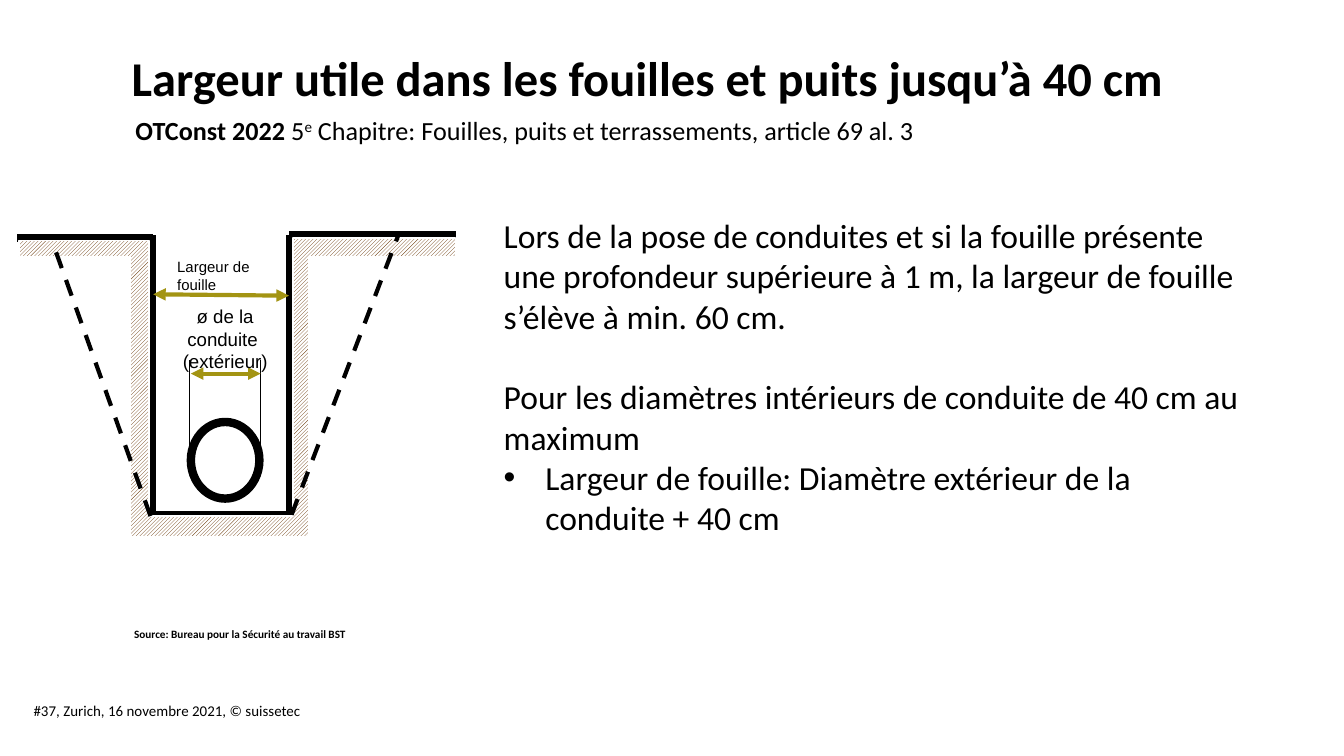
from dataclasses import dataclass

from lxml.etree import SubElement
from pptx import Presentation
from pptx.dml.color import RGBColor as RGB
from pptx.enum.dml import MSO_LINE as Dash, MSO_PATTERN as Pat
from pptx.enum.shapes import MSO_CONNECTOR as Link, MSO_SHAPE as Form
from pptx.enum.text import PP_ALIGN as Align
from pptx.oxml.ns import qn
from pptx.util import Pt

PX = 9144  # EMU in one px, 100 px to the inch
WIDE = 1000 * PX
HIGH = WIDE * 9 // 16


@dataclass(frozen=True)
class Theme:
    ink: RGB = RGB(0, 0, 0)
    paper: RGB = RGB(255, 255, 255)
    earth: RGB = RGB(0x66, 0x33, 0x00)
    gold: RGB = RGB(0xA3, 0x94, 0x13)
    body: str = "Calibri"
    label: str = "Arial"
    title: float = 26
    text: float = 18
    sub: float = 14
    pipe: float = 10
    small: float = 8
    source: float = 6
    wall: float = 4.5
    mark: float = 2.25
    thin: float = 0.75


T = Theme()
TRENCH = [(14, 179), (14, 191), (97, 191), (97, 399), (230, 399), (230, 191),
          (339, 191), (339, 177), (218, 177), (218, 384), (111, 384), (111, 179)]
WALLS = [(113, 175, 113, 381), (112, 383, 216, 383), (216, 384, 216, 175),
         (215, 175, 339, 175), (13, 177, 114, 177)]
SLOPES = [(217, 383, 296, 176), (112, 384, 39, 180)]


def put(obj, form):
    for name, value in form.items():
        setattr(obj, name, value)


def add_run(para, text, size, raised=False, **form):
    run = para.add_run()
    run.text = text
    put(run.font, {"name": T.body, "size": Pt(size)} | form)
    run.font.color.rgb = T.ink
    if raised:
        run._r.get_or_add_rPr().set("baseline", "30000")


def add_box(shapes, at, inset=True):
    """Add a wrapping text box and return its text frame."""
    frame = shapes.add_textbox(*(n * PX for n in at)).text_frame
    frame.word_wrap = True
    if not inset:
        put(frame, dict.fromkeys(
            ("margin_left", "margin_top", "margin_right", "margin_bottom"), 0))
    return frame


def add_text(shapes, at, text, size, inset=True, **form):
    para = add_box(shapes, at, inset).paragraphs[0]
    add_run(para, text, size, **form)


def add_line(shapes, ends, width, color=T.ink, dash=None, heads=False):
    link = shapes.add_connector(Link.STRAIGHT, *(n * PX for n in ends))
    put(link.line, {"width": Pt(width), "dash_style": dash})
    link.line.color.rgb = color
    if heads:
        stroke = link.line._get_or_add_ln()
        for end in ("a:headEnd", "a:tailEnd"):
            SubElement(stroke, qn(end), type="triangle")
    SubElement(link._element.spPr, qn("a:effectLst"))


def add_pipe(shapes, at):
    pipe = shapes.add_shape(Form.OVAL, *(n * PX for n in at))
    pipe.shadow.inherit = False
    pipe.fill.solid()
    pipe.fill.fore_color.rgb = T.paper
    pipe.line.color.rgb = T.ink
    pipe.line.width = Pt(T.wall)


def add_earth(shapes, points):
    pen = shapes.build_freeform(*points[0], scale=PX)
    pen.add_line_segments(points[1:], close=True)
    earth = pen.convert_to_shape()
    earth.shadow.inherit = False
    fill = earth.fill
    fill.patterned()
    fill.pattern = Pat.DARK_UPWARD_DIAGONAL
    fill.fore_color.rgb = T.earth
    fill.back_color.rgb = T.paper
    earth.line.color.rgb = T.paper
    earth.line.width = Pt(T.thin)


def add_rules(shapes):
    frame = add_box(shapes, (365, 155, 573, 192))
    first = frame.paragraphs[0]
    add_run(first, "Lors de la pose de conduites et si la fouille présente une profondeur "
            "supérieure à 1 m, la largeur de fouille s’élève à min. 60 cm.", T.text)
    second = frame.add_paragraph()
    second.space_before = Pt(21.6)
    add_run(second, "Pour les diamètres intérieurs de conduite de 40 cm au maximum", T.text)
    item = frame.add_paragraph()
    props = item._p.get_or_add_pPr()
    for name, value in {"marL": 31 * PX, "indent": -31 * PX}.items():
        props.set(name, str(value))
    SubElement(props, qn("a:buFont"), typeface=T.label)
    SubElement(props, qn("a:buChar"), char="•")
    add_run(item, "Largeur de fouille: Diamètre extérieur de la conduite + 40 cm", T.text)


def add_law(shapes):
    para = add_box(shapes, (91, 80, 654, 34)).paragraphs[0]
    add_run(para, "OTConst 2022", T.sub, bold=True)
    add_run(para, " 5", T.sub)
    add_run(para, "e", T.sub, raised=True)
    add_run(para, " Chapitre: Fouilles, puits et terrassements, article 69 al. 3", T.sub)


def add_trench(shapes):
    """Draw the section through the trench as one group."""
    group = shapes.add_group_shape().shapes
    for ends in WALLS:
        add_line(group, ends, T.wall)
    add_pipe(group, (142, 314, 51, 57))
    add_line(group, (114, 219, 215, 220), T.mark, T.gold, heads=True)
    for ends in ((141, 268, 141, 343), (194, 268, 194, 347)):
        add_line(group, ends, T.thin)
    add_line(group, (142, 278, 194, 278), T.mark, T.gold, heads=True)
    add_text(group, (122, 187, 86, 24), "Largeur de fouille", T.small, name=T.label)
    para = add_box(group, (122, 222, 91, 44)).paragraphs[0]
    para.alignment = Align.CENTER
    add_run(para, "ø de la conduite ", T.pipe, name=T.label)
    para.add_line_break()
    add_run(para, "(extérieur)", T.pipe, name=T.label)
    add_earth(group, TRENCH)
    for ends in SLOPES:
        add_line(group, ends, T.mark, dash=Dash.DASH)


def main():
    deck = Presentation()
    put(deck, {"slide_width": WIDE, "slide_height": HIGH})
    shapes = deck.slides.add_slide(deck.slide_layouts[6]).shapes
    add_text(shapes, (25, 522, 467, 24),
             "#37, Zurich, 16 novembre 2021, © suissetec", T.small, inset=False)
    add_rules(shapes)
    add_text(shapes, (98, 36, 858, 49),
             "Largeur utile dans les fouilles et puits jusqu’à 40 cm",
             T.title, inset=False, bold=True)
    add_law(shapes)
    add_text(shapes, (90, 462, 207, 20),
             "Source: Bureau pour la Sécurité au travail BST", T.source, bold=True)
    add_trench(shapes)
    deck.save("out.pptx")


if __name__ == "__main__":
    main()
